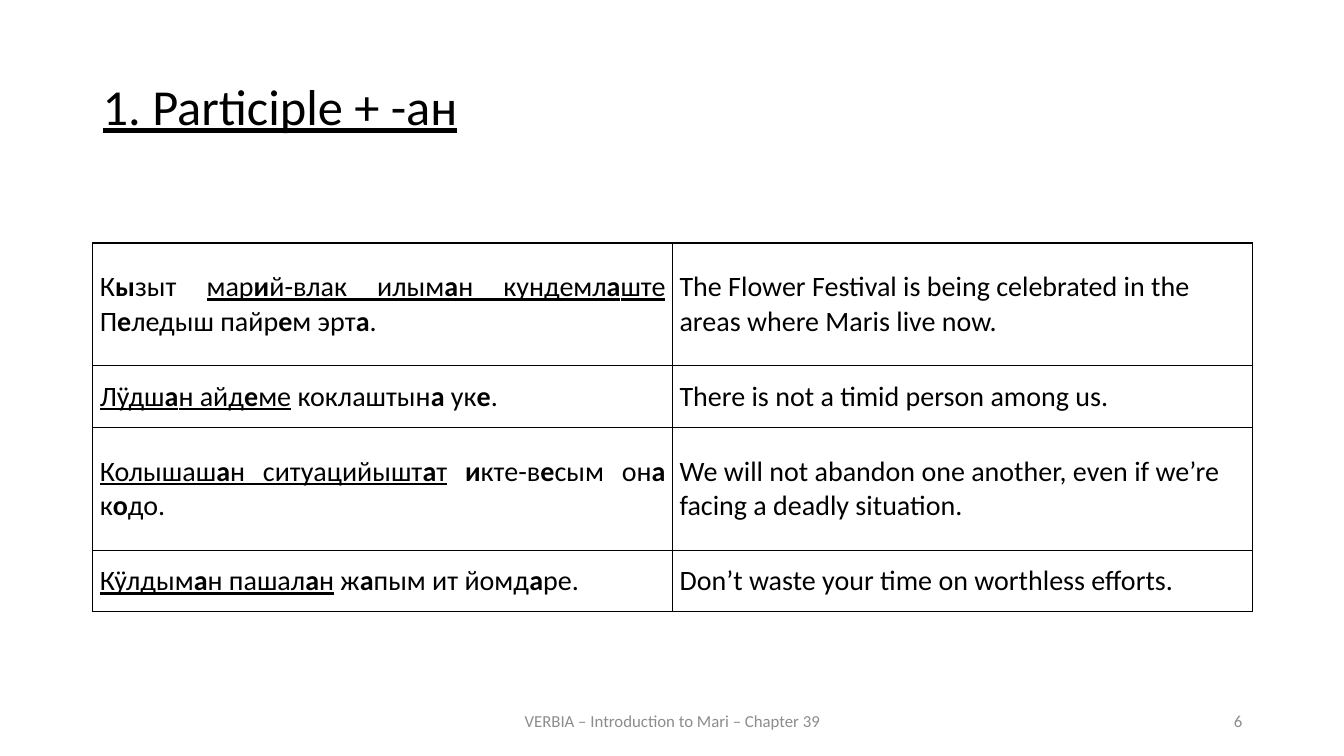
from lxml import etree
from pptx import Presentation
from pptx.dml.color import RGBColor
from pptx.enum.text import MSO_ANCHOR as Anchor, PP_ALIGN as Align
from pptx.oxml.ns import qn
from pptx.util import Inches, Pt

BLACK = RGBColor(0x00, 0x00, 0x00)
GREY = RGBColor(0x8C, 0x8C, 0x8C)
FONT = "Calibri"
WIDTH, HEIGHT = 13.33, 7.5
LEFT, CONTENT_W = 0.92, 11.5
ROW_H = 0.61
FOOTER_TOP, FOOTER_H = 6.95, 0.4

# In the Mari sentences, _ switches underline and * switches bold (stress).
EXAMPLES = [
    (2, "К*ы*зыт _мар*и*й-влак илым*а*н кундемл*а*ште_ П*е*ледыш пайр*е*м эрт*а*.",
     "The Flower Festival is being celebrated in the areas where Maris live now."),
    (1, "_Лӱдш*а*н айд*е*ме_ коклаштын*а* ук*е*.",
     "There is not a timid person among us."),
    (2, "_Колышаш*а*н ситуацийышт*а*т_ *и*кте-в*е*сым он*а* к*о*до.",
     "We will not abandon one another, even if we’re facing a deadly situation."),
    (1, "_Кӱлдым*а*н пашал*а*н_ ж*а*пым ит йомд*а*ре.",
     "Don’t waste your time on worthless efforts."),
]


def set_all(obj, values):
    for name, value in values.items():
        setattr(obj, name, value)


def write(p, text, size, color=BLACK):
    """Fill a paragraph with runs, reading the _ and * switches."""
    for i, part in enumerate(text.split("_")):
        for j, piece in enumerate(part.split("*")):
            if piece:
                r = p.add_run()
                r.text = piece
                set_all(r.font, {"name": FONT, "size": Pt(size),
                                 "underline": i % 2 == 1, "bold": j % 2 == 1})
                r.font.color.rgb = color


def add_text(s, box, text, size, color, anchor, **paragraph_format):
    tf = s.shapes.add_textbox(*map(Inches, box)).text_frame
    set_all(tf, {"word_wrap": True, "vertical_anchor": anchor})
    p = tf.paragraphs[0]
    set_all(p, paragraph_format)
    write(p, text, size, color)


def add_borders(cell):
    tc_pr = cell._tc.get_or_add_tcPr()
    for i, side in enumerate(("lnL", "lnR", "lnT", "lnB")):
        ln = etree.Element(qn(f"a:{side}"), w=str(Pt(1)))
        fill = etree.SubElement(ln, qn("a:solidFill"))
        etree.SubElement(fill, qn("a:srgbClr"), val=str(BLACK))
        tc_pr.insert(i, ln)


def fill_cell(cell, text, align):
    set_all(cell, {"vertical_anchor": Anchor.MIDDLE,
                   "margin_left": Inches(0.07), "margin_right": Inches(0.07),
                   "margin_top": 0, "margin_bottom": 0})
    cell.fill.background()
    add_borders(cell)
    p = cell.text_frame.paragraphs[0]
    p.alignment = align
    write(p, text, 20)


def add_examples(s, left, top, width):
    """Mari sentences on the left, translations on the right."""
    height = ROW_H * sum(lines for lines, *_ in EXAMPLES)
    table = s.shapes.add_table(len(EXAMPLES), 2, *map(Inches, (left, top, width, height))).table
    set_all(table, {"first_row": False, "horz_banding": False})
    for row, (lines, mari, english) in enumerate(EXAMPLES):
        table.rows[row].height = Inches(ROW_H * lines)
        fill_cell(table.cell(row, 0), mari, Align.JUSTIFY)
        fill_cell(table.cell(row, 1), english, Align.LEFT)


def add_footer(s, top, height):
    for left, width, text, align in (
            (4.42, 4.5, "VERBIA – Introduction to Mari – Chapter 39", Align.CENTER),
            (9.42, 3, "6", Align.RIGHT)):
        add_text(s, (left, top, width, height), text, 12, GREY, Anchor.MIDDLE, alignment=align)


def main():
    prs = Presentation()
    set_all(prs, {"slide_width": Inches(WIDTH), "slide_height": Inches(HEIGHT)})
    s = prs.slides.add_slide(prs.slide_layouts[6])
    add_text(s, (LEFT, 0.76, CONTENT_W, 0.83), "_1. Participle + -ан_", 36, BLACK, Anchor.TOP,
             alignment=Align.JUSTIFY, line_spacing=0.9, space_before=Pt(12))
    add_examples(s, LEFT, 2.41, CONTENT_W)
    add_footer(s, FOOTER_TOP, FOOTER_H)
    prs.save("out.pptx")


if __name__ == "__main__":
    main()
